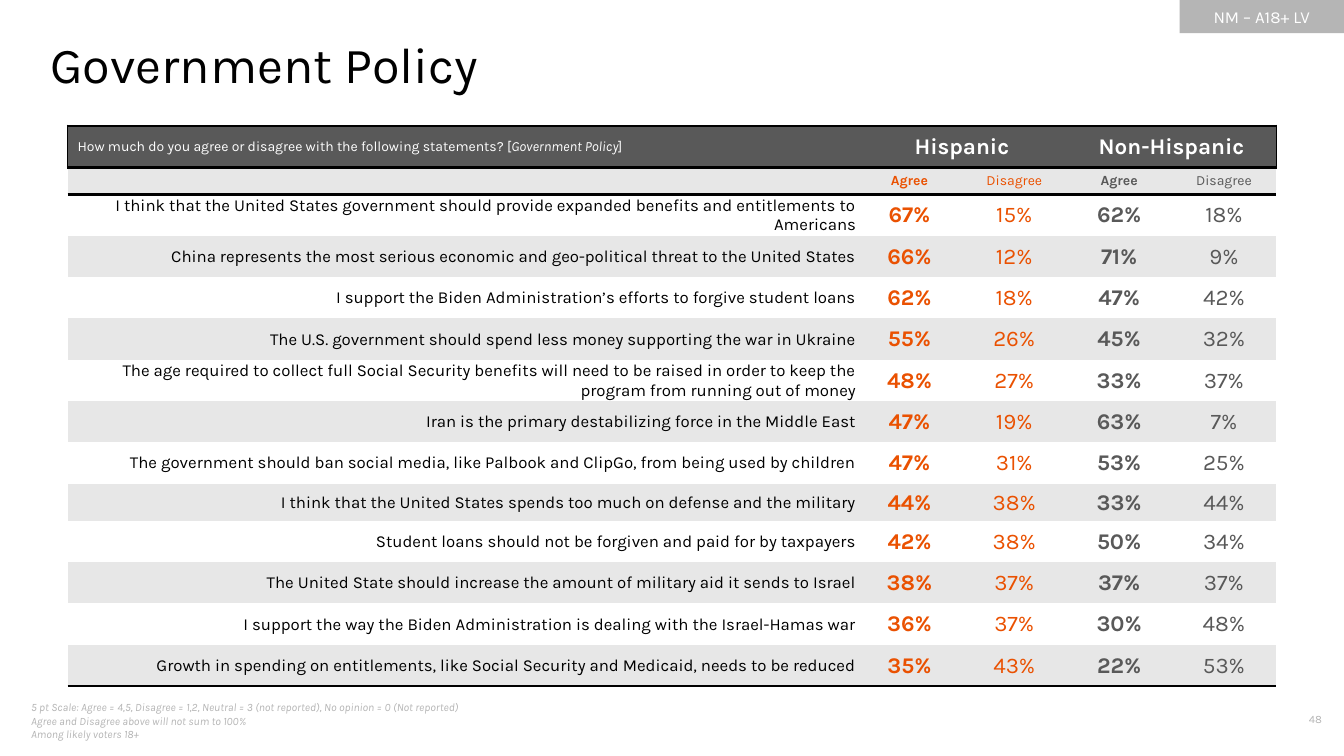
from dataclasses import dataclass

from lxml import etree
from pptx import Presentation
from pptx import util as u
from pptx.dml.color import RGBColor
from pptx.enum import shapes, text
from pptx.oxml import ns

FONT = "Karla"
BLACK = RGBColor(0x00, 0x00, 0x00)
WHITE = RGBColor(0xFF, 0xFF, 0xFF)
ORANGE = RGBColor(0xEA, 0x51, 0x01)
DARK_GREY = RGBColor(0x59, 0x59, 0x59)
MID_GREY = RGBColor(0xB5, 0xB5, 0xB5)
LIGHT_GREY = RGBColor(0xE7, 0xE7, 0xE7)
LEFT, CENTER, RIGHT = text.PP_ALIGN.LEFT, text.PP_ALIGN.CENTER, text.PP_ALIGN.RIGHT
NO_TABLE_STYLE = "{2D5ABB26-0587-4C30-8999-92F81FD0307C}"
RULE = 2.25
EDGE = 1


@dataclass
class Style:
    size: float
    color: RGBColor
    bold: bool = False
    italic: bool = False
    align: text.PP_ALIGN = LEFT


@dataclass
class Label:
    lines: list[str]
    box: tuple[float, float, float, float]
    style: Style
    anchor: text.MSO_ANCHOR = text.MSO_ANCHOR.TOP


@dataclass
class Statement:
    wording: str
    shares: tuple[int, int, int, int]


# Content
LABELS = [
    Label(["5 pt Scale: Agree = 4,5, Disagree = 1,2, Neutral = 3 (not reported), "
           "No opinion = 0 (Not reported)",
           "Agree and Disagree above will not sum to 100%",
           "Among likely voters 18+"],
          (0.21, 6.95, 5.11, 0.4), Style(8, MID_GREY, italic=True), text.MSO_ANCHOR.MIDDLE),
    Label(["48"], (12.33, 7.02, 0.88, 0.27), Style(8, MID_GREY, align=RIGHT)),
]
STATEMENTS = [
    Statement("I think that the United States government should provide expanded benefits "
              "and entitlements to Americans", (67, 15, 62, 18)),
    Statement("China represents the most serious economic and geo-political threat "
              "to the United States", (66, 12, 71, 9)),
    Statement("I support the Biden Administration’s efforts to forgive student loans",
              (62, 18, 47, 42)),
    Statement("The U.S. government should spend less money supporting the war in Ukraine",
              (55, 26, 45, 32)),
    Statement("The age required to collect full Social Security benefits will need to be raised "
              "in order to keep the program from running out of money", (48, 27, 33, 37)),
    Statement("Iran is the primary destabilizing force in the Middle East", (47, 19, 63, 7)),
    Statement("The government should ban social media, like Palbook and ClipGo, "
              "from being used by children", (47, 31, 53, 25)),
    Statement("I think that the United States spends too much on defense and the military",
              (44, 38, 33, 44)),
    Statement("Student loans should not be forgiven and paid for by taxpayers", (42, 38, 50, 34)),
    Statement("The United State should increase the amount of military aid it sends to Israel",
              (38, 37, 37, 37)),
    Statement("I support the way the Biden Administration is dealing with the Israel-Hamas war",
              (36, 37, 30, 48)),
    Statement("Growth in spending on entitlements, like Social Security and Medicaid, "
              "needs to be reduced", (35, 43, 22, 53)),
]
COLUMN_WIDTHS = [7.83] + [1.04] * 4
ROW_HEIGHTS = [0.41, 0.25] + [0.41] * 7 + [0.37] + [0.41] * 4


def format_paragraph(paragraph, style: Style) -> None:
    paragraph.alignment = style.align
    for run in paragraph.runs:
        font = run.font
        font.name, font.size = FONT, u.Pt(style.size)
        font.bold, font.italic = style.bold, style.italic
        font.color.rgb = style.color


def write_lines(text_frame, lines: list[str], style: Style) -> None:
    text_frame.text = "\n".join(lines)
    for paragraph in text_frame.paragraphs:
        format_paragraph(paragraph, style)


def add_label(slide, label: Label):
    box = slide.shapes.add_textbox(*map(u.Inches, label.box))
    box.text_frame.word_wrap = True
    box.text_frame.vertical_anchor = label.anchor
    write_lines(box.text_frame, label.lines, label.style)
    return box


def set_borders(cell, **widths: float) -> None:
    properties = cell._tc.get_or_add_tcPr()
    sides = [side for side in "LRTB" if side in widths]
    for index, side in enumerate(sides):
        line = etree.Element(ns.qn(f"a:ln{side}"), w=str(u.Pt(widths[side])))
        fill = etree.SubElement(line, ns.qn("a:solidFill"))
        etree.SubElement(fill, ns.qn("a:srgbClr"), val=str(BLACK))
        properties.insert(index, line)


def fill_cell(cell, wording: str, style: Style, fill: RGBColor, tight: bool = False) -> None:
    cell.fill.solid()
    cell.fill.fore_color.rgb = fill
    cell.vertical_anchor = text.MSO_ANCHOR.MIDDLE
    if tight:
        cell.margin_left = cell.margin_right = cell.margin_top = u.Inches(0.01)
        cell.margin_bottom = 0
    write_lines(cell.text_frame, [wording], style)
    if not wording:
        # An empty cell keeps the row low only with a small end mark
        etree.SubElement(cell.text_frame.paragraphs[0]._p, ns.qn("a:endParaRPr"),
                         sz=str(round(style.size * 100)))


def answer_style(column: int, size: float) -> Style:
    """Hispanic columns are orange, the others grey; Agree columns are bold."""
    return Style(size, ORANGE if column < 3 else DARK_GREY, bold=column % 2 == 1, align=CENTER)


def add_heading_rows(table) -> None:
    question = Style(10, WHITE)
    group = Style(16, WHITE, bold=True, align=CENTER)
    table.cell(0, 1).merge(table.cell(0, 2))
    table.cell(0, 3).merge(table.cell(0, 4))
    headings = ["How much do you agree or disagree with the following statements? [",
                "Hispanic", "", "Non-Hispanic", ""]
    for column, heading in enumerate(headings):
        cell = table.cell(0, column)
        fill_cell(cell, heading, group if column else question, DARK_GREY)
        edges = {0: {"L": EDGE}, 3: {"R": EDGE}, 4: {"R": EDGE}}.get(column, {})
        set_borders(cell, T=RULE, B=RULE, **edges)

    paragraph = table.cell(0, 0).text_frame.paragraphs[0]
    for part in ("Government Policy", "]"):
        paragraph.add_run().text = part
    format_paragraph(paragraph, question)
    paragraph.runs[1].font.italic = True

    for column, answer in enumerate(["", "Agree", "Disagree", "Agree", "Disagree"]):
        fill_cell(table.cell(1, column), answer, answer_style(column, 10), LIGHT_GREY)
        set_borders(table.cell(1, column), T=RULE)


def add_results_table(slide) -> None:
    frame = slide.shapes.add_table(
        len(ROW_HEIGHTS), len(COLUMN_WIDTHS), u.Inches(0.67), u.Inches(1.25),
        u.Inches(sum(COLUMN_WIDTHS)), u.Inches(sum(ROW_HEIGHTS)))
    table = frame.table
    table.first_row = table.horz_banding = False
    next(frame.element.iter(ns.qn("a:tableStyleId"))).text = NO_TABLE_STYLE
    for column, width in zip(table.columns, COLUMN_WIDTHS):
        column.width = u.Inches(width)
    for row, height in zip(table.rows, ROW_HEIGHTS):
        row.height = u.Inches(height)

    add_heading_rows(table)
    for row, statement in enumerate(STATEMENTS, start=2):
        fill = LIGHT_GREY if row % 2 else WHITE
        fill_cell(table.cell(row, 0), statement.wording, Style(12, BLACK, align=RIGHT), fill, True)
        for column, share in enumerate(statement.shares, start=1):
            fill_cell(table.cell(row, column), f"{share}%", answer_style(column, 16), fill, True)
    for column in range(len(COLUMN_WIDTHS)):
        set_borders(table.cell(len(ROW_HEIGHTS) - 1, column), B=RULE)


def add_audience_tag(slide) -> None:
    tag = slide.shapes.add_shape(shapes.MSO_SHAPE.RECTANGLE,
                                 *map(u.Inches, (11.7, 0, 1.63, 0.33)))
    tag.shadow.inherit = False
    tag.fill.solid()
    tag.fill.fore_color.rgb = MID_GREY
    tag.line.fill.background()
    tag.text_frame.vertical_anchor = text.MSO_ANCHOR.MIDDLE
    write_lines(tag.text_frame, ["NM – A18+ LV"], Style(12, WHITE, align=CENTER))


def add_title(slide) -> None:
    title = add_label(slide, Label(["Government Policy"], (0.5, 0.33, 12, 0.61), Style(36, BLACK)))
    text_frame = title.text_frame
    text_frame.margin_left = text_frame.margin_right = 0
    text_frame.margin_top = text_frame.margin_bottom = 0
    text_frame.auto_size = text.MSO_AUTO_SIZE.SHAPE_TO_FIT_TEXT


def main() -> None:
    presentation = Presentation()
    presentation.slide_width, presentation.slide_height = u.Inches(13.33), u.Inches(7.5)
    slide = presentation.slides.add_slide(presentation.slide_layouts[6])
    for label in LABELS:
        add_label(slide, label)
    add_audience_tag(slide)
    add_title(slide)
    add_results_table(slide)
    presentation.save("out.pptx")


if __name__ == "__main__":
    main()
